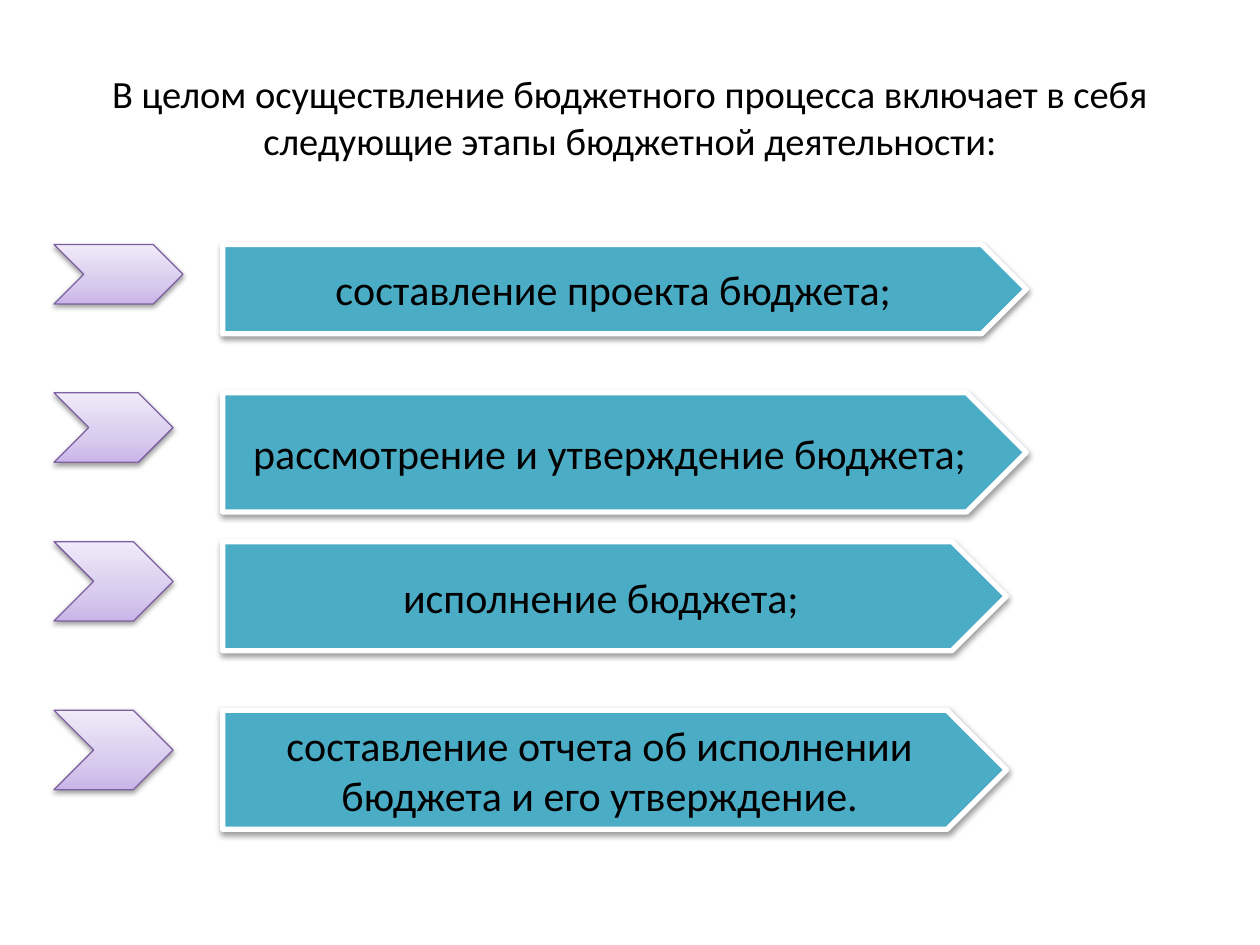
from lxml.etree import SubElement
from pptx import Presentation
from pptx.dml.color import RGBColor
from pptx.enum.shapes import MSO_SHAPE
from pptx.enum.text import MSO_ANCHOR, PP_ALIGN
from pptx.oxml import parse_xml
from pptx.oxml.ns import nsdecls, qn
from pptx.util import Cm, Pt

TITLE = ("В целом осуществление бюджетного процесса включает в себя "
         "следующие этапы бюджетной деятельности:")
# text, top, chevron (width, height), stage arrow (width, height), in cm
STAGES = [
    ("составление проекта бюджета;", 4.93, (2.6, 1.2), (16.2, 1.8)),
    ("рассмотрение и утверждение бюджета;", 7.92, (2.4, 1.4), (16.2, 2.4)),
    ("исполнение бюджета;", 10.92, (2.4, 1.6), (15.8, 2.2)),
    ("составление отчета об исполнении бюджета и его утверждение.",
     14.32, (2.4, 1.6), (15.8, 2.4)),
]
CHEVRON_LEFT, ARROW_LEFT = 1.09, 4.49

FONT = "Calibri"
BLACK = RGBColor(0x00, 0x00, 0x00)
WHITE = RGBColor(0xFF, 0xFF, 0xFF)
TEAL = RGBColor(0x4B, 0xAC, 0xC6)
PURPLE = RGBColor(0x7D, 0x60, 0xA0)
LILACS = [(0, RGBColor(0xC9, 0xB5, 0xE8)),
          (35, RGBColor(0xD8, 0xCB, 0xEE)),
          (100, RGBColor(0xF0, 0xEA, 0xF9))]


def write(shape, text, size):
    tf = shape.text_frame
    tf.text = text
    tf.word_wrap = True
    tf.vertical_anchor = MSO_ANCHOR.MIDDLE
    p = tf.paragraphs[0]
    p.alignment = PP_ALIGN.CENTER
    p.font.name, p.font.size, p.font.color.rgb = FONT, Pt(size), BLACK


def fill_lilac(sp):
    """Give the shape the three-stop gradient, lightest at the top."""
    sp.fill.gradient()
    sp.fill.gradient_angle = 90
    stops = sp._element.spPr.find(qn("a:gradFill")).find(qn("a:gsLst"))
    for stop in list(stops):
        stops.remove(stop)
    for position, color in LILACS:
        stop = SubElement(stops, qn("a:gs"), pos=str(position * 1000))
        SubElement(stop, qn("a:srgbClr"), val=str(color))


def add_shadowed(slide, kind, left, top, size, line_color, line_width):
    sp = slide.shapes.add_shape(kind, Cm(left), Cm(top), *map(Cm, size))
    sp.line.color.rgb = line_color
    sp.line.width = Pt(line_width)
    sp.shadow.inherit = False
    sp._element.spPr.find(qn("a:effectLst")).append(parse_xml(
        f'<a:outerShdw {nsdecls("a")} blurRad="40000" dist="20000" '
        'dir="5400000" rotWithShape="0"><a:srgbClr val="000000">'
        '<a:alpha val="38000"/></a:srgbClr></a:outerShdw>'))
    return sp


def main():
    prs = Presentation()
    prs.slide_width, prs.slide_height = Cm(25.4), Cm(19.05)
    slide = prs.slides.add_slide(prs.slide_layouts[5])

    title = slide.shapes.title
    title.left, title.top = Cm(1.27), Cm(0.76)
    title.width, title.height = Cm(22.86), Cm(3.18)
    write(title, TITLE, 22)

    for _, top, size, _ in STAGES:
        fill_lilac(add_shadowed(slide, MSO_SHAPE.CHEVRON, CHEVRON_LEFT, top,
                                size, PURPLE, 0.75))
    for text, top, _, size in STAGES:
        sp = add_shadowed(slide, MSO_SHAPE.PENTAGON, ARROW_LEFT, top,
                          size, WHITE, 3)
        sp.fill.solid()
        sp.fill.fore_color.rgb = TEAL
        write(sp, text, 24)

    prs.save("out.pptx")


if __name__ == "__main__":
    main()
